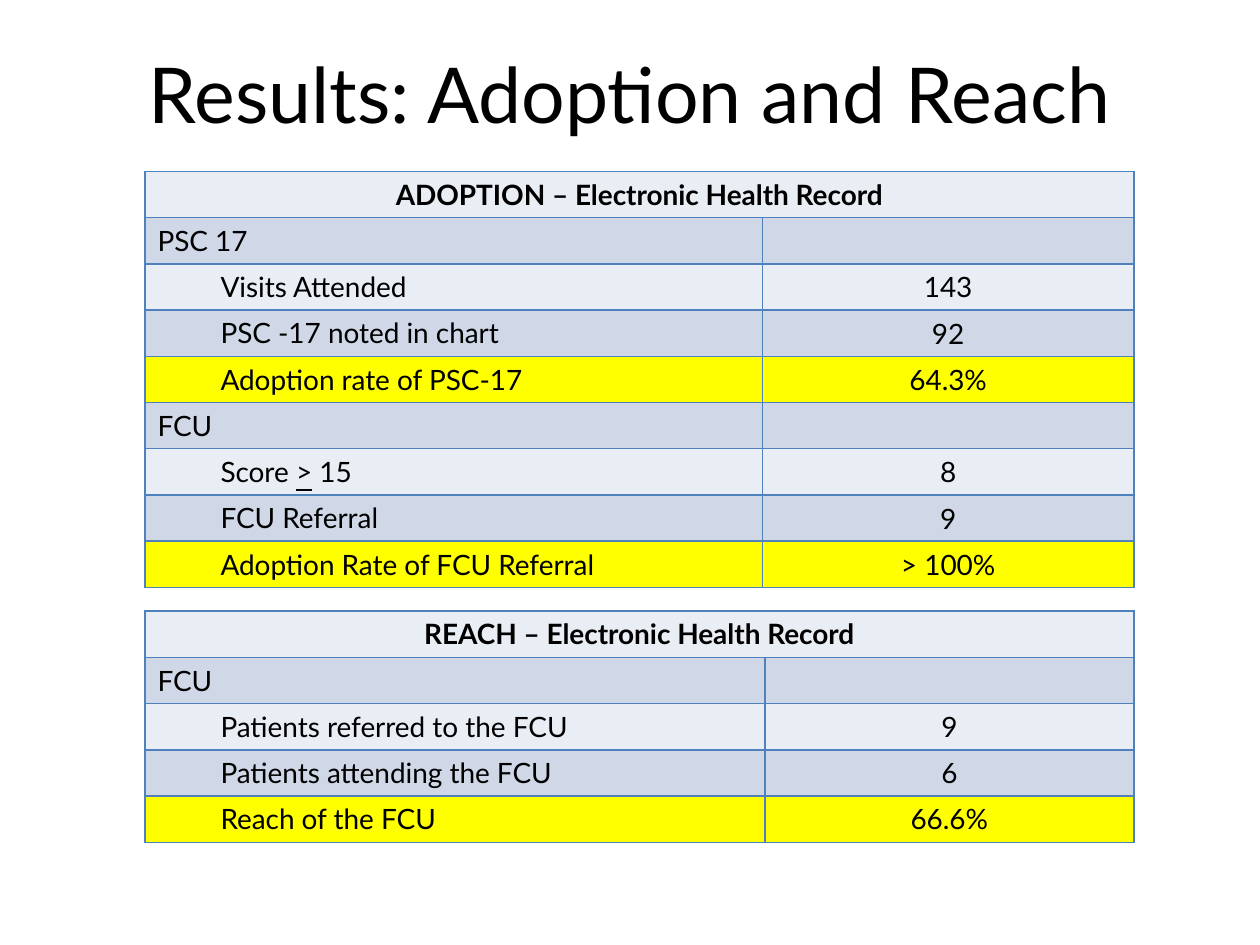
from dataclasses import dataclass

from lxml import etree
from pptx import Presentation
from pptx.dml.color import RGBColor
from pptx.enum.text import MSO_ANCHOR, PP_ALIGN
from pptx.oxml.ns import qn
from pptx.util import Inches, Pt

CENTER, LEFT = PP_ALIGN.CENTER, PP_ALIGN.LEFT
TOP, MIDDLE, BOTTOM = MSO_ANCHOR.TOP, MSO_ANCHOR.MIDDLE, MSO_ANCHOR.BOTTOM


@dataclass(frozen=True)
class Theme:
    """Colours, font and sizes of the slide."""
    font: str = "Lato"
    ink: str = "000000"
    line: str = "4F81BD"
    light: str = "E9EDF4"
    dark: str = "D0D8E8"
    mark: str = "FFFF00"
    title: int = 44
    body: int = 16
    rule: int = 1


THEME = Theme()
INDENT = Inches(0.5)
HEAD, GROUP, ITEM, RATE = "head", "group", "item", "rate"

ADOPTION = [
    (HEAD, "ADOPTION – Electronic Health Record", ""),
    (GROUP, "PSC 17", ""),
    (ITEM, "Visits Attended", "143"),
    (ITEM, "PSC -17 noted in chart", "92"),
    (RATE, "Adoption rate of PSC-17", "64.3%"),
    (GROUP, "FCU", ""),
    (ITEM, ("Score ", ">", " 15"), "8"),
    (ITEM, "FCU Referral", "9"),
    (RATE, "Adoption Rate of FCU Referral", "> 100%"),
]
REACH = [
    (HEAD, "REACH – Electronic Health Record", ""),
    (GROUP, "FCU", ""),
    (ITEM, "Patients referred to the FCU", "9"),
    (ITEM, "Patients attending the FCU", "6"),
    (RATE, "Reach of the FCU", "66.6%"),
]


def write(para, text, size, align=LEFT, bold=False):
    """Fill a paragraph; the middle part of a tuple is underlined."""
    para.alignment = align
    parts = (text,) if isinstance(text, str) else text
    for spot, part in enumerate(parts):
        if part:
            run = para.add_run()
            run.text = part
            if spot == 1:
                run.font.underline = True
    font = para.font
    font.name, font.size, font.bold = THEME.font, Pt(size), bold
    font.color.rgb = RGBColor.from_string(THEME.ink)


def paint(cell, fill):
    """Give a cell its four borders and its fill."""
    props = cell._tc.get_or_add_tcPr()
    for side in ("lnL", "lnR", "lnT", "lnB"):
        line = etree.SubElement(props, qn(f"a:{side}"), w=str(Pt(THEME.rule)))
        solid = etree.SubElement(line, qn("a:solidFill"))
        etree.SubElement(solid, qn("a:srgbClr"), val=THEME.line)
    cell.fill.solid()
    cell.fill.fore_color.rgb = RGBColor.from_string(fill)


def add_title(slide, box, text):
    """Place the centred slide title in the box."""
    frame = slide.shapes.add_textbox(*map(Inches, box)).text_frame
    frame.word_wrap = True
    frame.vertical_anchor = MIDDLE
    write(frame.paragraphs[0], text, THEME.title, CENTER)


def add_grid(slide, box, rows, split, anchor):
    """Place a two-column results table in the box."""
    left, top, width, height = map(Inches, box)
    table = slide.shapes.add_table(len(rows), 2, left, top, width, height).table
    table.columns[0].width = Inches(split)
    table.columns[1].width = width - Inches(split)
    for index, (kind, label, value) in enumerate(rows):
        name, count = table.cell(index, 0), table.cell(index, 1)
        stripe = THEME.dark if index % 2 else THEME.light
        for cell in (name, count):
            paint(cell, THEME.mark if kind == RATE else stripe)
        para = name.text_frame.paragraphs[0]
        if kind in (ITEM, RATE):
            para.level = 1
            para._p.get_or_add_pPr().set("marL", str(INDENT))
            para._p.get_or_add_pPr().set("indent", "0")
            count.vertical_anchor = anchor
        head = kind == HEAD
        write(para, label, THEME.body, CENTER if head else LEFT, head)
        write(count.text_frame.paragraphs[0], value, THEME.body, CENTER)
        if head:
            name.merge(count)


def main():
    """Build and save the slide."""
    deck = Presentation()
    deck.slide_width, deck.slide_height = Inches(10), Inches(7.5)
    slide = deck.slides.add_slide(deck.slide_layouts[6])
    add_title(slide, (0.5, 0.11, 9, 1.25), "Results: Adoption and Reach")
    add_grid(slide, (1.15, 1.36, 7.85, 3.3), ADOPTION, 4.9, BOTTOM)
    add_grid(slide, (1.15, 4.85, 7.85, 1.83), REACH, 4.92, TOP)
    deck.save("out.pptx")


if __name__ == "__main__":
    main()
